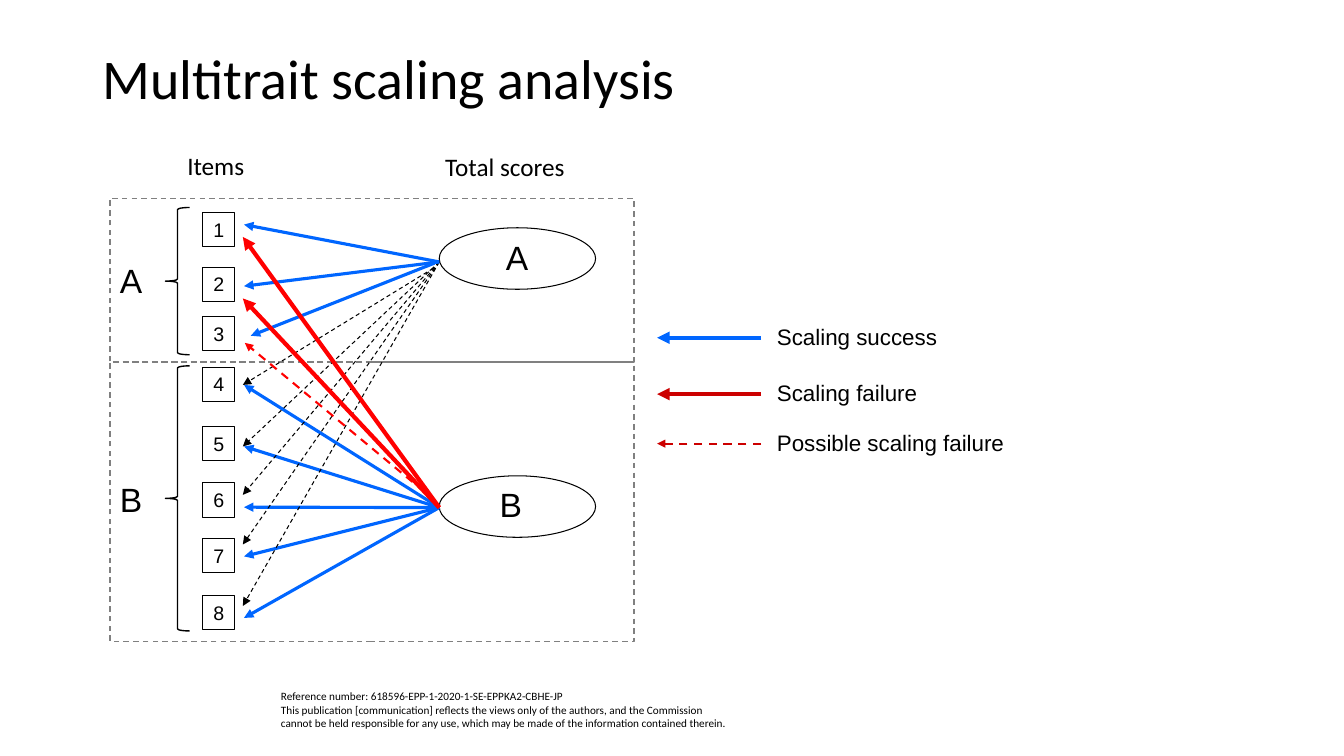
from dataclasses import dataclass

from lxml.etree import SubElement
from pptx import Presentation
from pptx.dml.color import RGBColor
from pptx.enum.dml import MSO_LINE
from pptx.enum.shapes import MSO_CONNECTOR, MSO_SHAPE
from pptx.enum.text import MSO_ANCHOR, PP_ALIGN
from pptx.oxml.ns import qn
from pptx.util import Cm, Pt


@dataclass(frozen=True)
class Theme:
    ink: str = "000000"
    gray: str = "808080"
    blue: str = "0066FF"
    red: str = "FF0000"
    dark: str = "CC0000"
    head: str = "Calibri"
    body: str = "Arial"
    title: int = 40
    trait: int = 24
    label: int = 18
    key: int = 16
    item: int = 14
    note: int = 8


@dataclass(frozen=True)
class Style:
    color: str
    width: float
    dash: bool = False


@dataclass(frozen=True)
class Fan:
    """Arrows that run from one point to several tips."""
    style: Style
    start: tuple[float, float]
    tips: list[tuple[float, float]]


@dataclass(frozen=True)
class Label:
    text: str
    left: float
    top: float
    width: float
    height: float
    font: str
    size: int
    wrap: bool = False


T = Theme()
THIN = Style(T.ink, 0.75)
BRACE = Style(T.ink, 1)
FRAME = Style(T.gray, 1, True)
GOOD = Style(T.blue, 2.25)
OTHER = Style(T.ink, 0.75, True)
FAIL = Style(T.red, 3)
MAYBE = Style(T.red, 1.5, True)

deck = Presentation()
deck.slide_width, deck.slide_height = Cm(33.87), Cm(19.05)
slide = deck.slides.add_slide(deck.slide_layouts[6])


def write(frame, text: str, font: str, size: int, wrap: bool = False):
    frame.word_wrap = wrap
    para = frame.paragraphs[0]
    para.text = text
    form = {"name": font, "size": Pt(size)}
    for run in para.runs:
        for key, value in form.items():
            setattr(run.font, key, value)
        run.font.color.rgb = RGBColor.from_string(T.ink)
    return para


def stroke(line, style: Style) -> None:
    line.color.rgb = RGBColor.from_string(style.color)
    line.width = Pt(style.width)
    if style.dash:
        line.dash_style = MSO_LINE.DASH


def arrow(start: tuple[float, float], tip: tuple[float, float], style: Style) -> None:
    link = slide.shapes.add_connector(
        MSO_CONNECTOR.STRAIGHT, *(Cm(v) for v in start + tip))
    stroke(link.line, style)
    SubElement(link.line._get_or_add_ln(), qn("a:tailEnd"), type="triangle")
    SubElement(link._element.spPr, qn("a:effectLst"))


def shape(kind: MSO_SHAPE, left: float, top: float, width: float,
          height: float, style: Style):
    form = slide.shapes.add_shape(kind, Cm(left), Cm(top), Cm(width), Cm(height))
    form.shadow.inherit = False
    form.fill.background()
    stroke(form.line, style)
    return form


def label(spec: Label):
    box = slide.shapes.add_textbox(
        Cm(spec.left), Cm(spec.top), Cm(spec.width), Cm(spec.height))
    para = write(box.text_frame, spec.text, spec.font, spec.size, spec.wrap)
    return box.text_frame, para


# Title
frame, para = label(Label("Multitrait scaling analysis", 2.34, 1.02, 29.21, 2.06,
                          T.head, T.title, True))
frame.vertical_anchor = MSO_ANCHOR.MIDDLE
para.line_spacing = 0.9

# Frames and braces of the two traits
for top, height in ((5.0, 4.12), (9.12, 7.04)):
    shape(MSO_SHAPE.RECTANGLE, 2.77, top, 13.21, height, FRAME)
for top, height in ((5.23, 3.71), (9.22, 6.68)):
    shape(MSO_SHAPE.LEFT_BRACE, 4.17, top, 0.61, height, BRACE)

# Numbered items
tops = (5.36, 6.73, 7.98, 9.25, 10.74, 12.17, 13.56, 15.01)
for number, top in enumerate(tops, 1):
    box = shape(MSO_SHAPE.RECTANGLE, 5.11, top, 0.81, 0.86, THIN)
    para = write(box.text_frame, str(number), T.body, T.item)
    para.alignment = PP_ALIGN.CENTER

# Total scores
for top in (5.74, 11.99):
    shape(MSO_SHAPE.OVAL, 11.07, top, 3.94, 1.55, THIN)

# Arrows from the scores to the items
A, B = (11.07, 6.6), (11.07, 12.79)
fans = [
    Fan(GOOD, B, [(6.15, y) for y in (9.7, 11.25, 12.78, 14.02, 15.57)]),
    Fan(OTHER, A, [(6.12, y) for y in (11.25, 12.47, 13.72, 15.27)]),
    Fan(OTHER, (10.92, 6.76), [(6.12, 9.7)]),
    Fan(GOOD, A, [(6.15, 5.66), (6.15, 7.21)]),
    Fan(GOOD, (10.95, 6.63), [(6.32, 8.46)]),
    Fan(FAIL, B, [(6.12, 7.52), (6.12, 5.97)]),
    Fan(MAYBE, (10.97, 12.62), [(6.17, 8.64)]),
]
for fan in fans:
    for tip in fan.tips:
        arrow(fan.start, tip, fan.style)

# Legend
keys = [
    ("Scaling success", 8.51, 4.55, Style(T.blue, 3)),
    ("Scaling failure", 9.93, 4.04, Style(T.dark, 3)),
    ("Possible scaling failure", 11.18, 6.25, Style(T.dark, 1.5, True)),
]
for text, y, width, style in keys:
    arrow((19.18, y), (16.56, y), style)
    label(Label(text, 19.33, y - 0.49, width, 0.94, T.body, T.key))

# Headings, trait letters and footer
note = (
    "Reference number: 618596-EPP-1-2020-1-SE-EPPKA2-CBHE-JP\n"
    "This publication [communication] reflects the views only of the authors, "
    "and the Commission cannot be held responsible for any use, which may be "
    "made of the information contained therein."
)
labels = [
    Label("Items", 4.47, 3.66, 1.96, 1.02, T.head, T.label),
    Label("Total scores", 10.97, 3.68, 3.56, 1.02, T.head, T.label),
    Label("A", 2.77, 6.43, 1.12, 1.28, T.body, T.trait),
    Label("B", 2.77, 11.94, 1.12, 1.28, T.body, T.trait),
    Label("A", 12.5, 5.84, 1.07, 1.28, T.body, T.trait),
    Label("B", 12.34, 12.07, 1.07, 1.28, T.body, T.trait),
    Label(note, 6.83, 17.25, 11.79, 1.28, T.head, T.note, True),
]
for entry in labels:
    label(entry)

deck.save("out.pptx")
